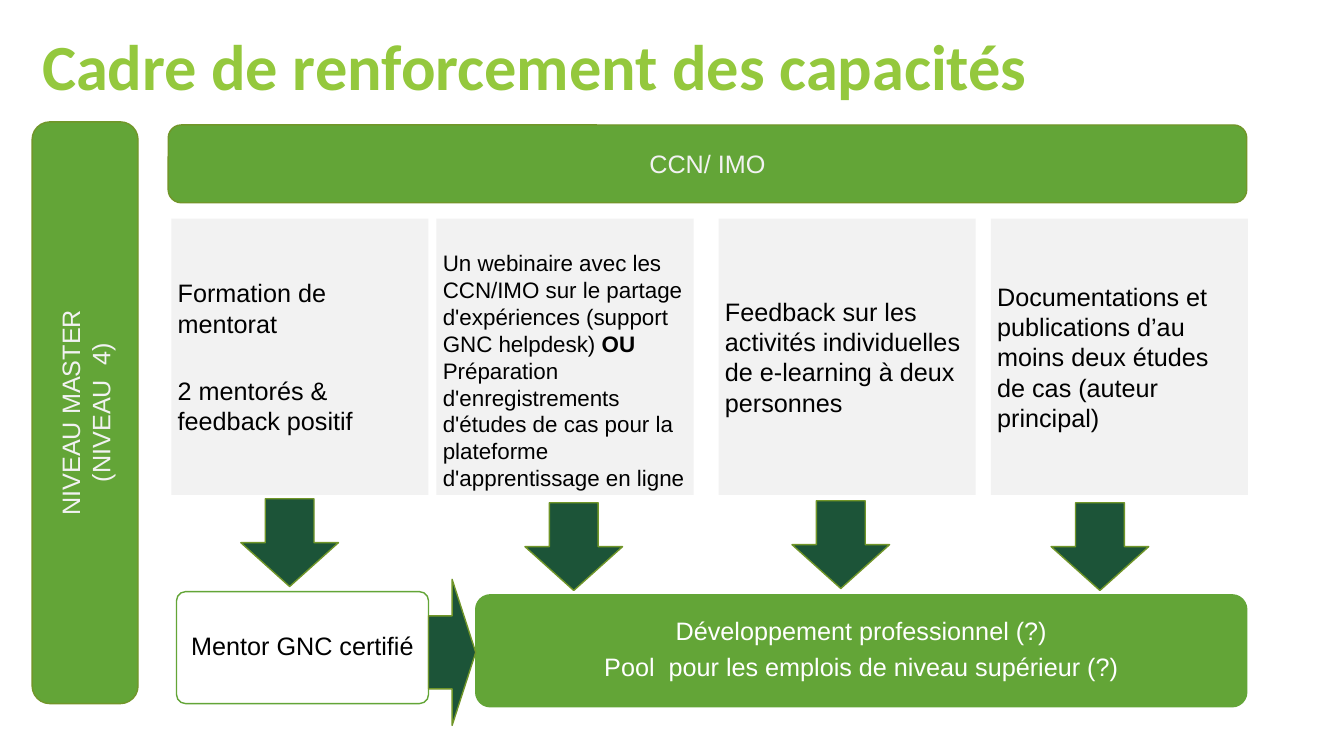
from pptx import Presentation
from pptx.dml.color import RGBColor
from pptx.enum.shapes import MSO_SHAPE
from pptx.enum.text import MSO_ANCHOR, PP_ALIGN
from pptx.util import Cm, Pt

GREEN, DARK, OLIVE, LIME = "63A537", "1C5438", "719629", "94C83D"
GREY, BLACK, WHITE = "F2F2F2", "000000", "FFFFFF"


def rgb(value):
    return RGBColor.from_string(value)


def add_text(sp, paragraphs, size=18, color=BLACK, font="Arial", bold=False,
             align=PP_ALIGN.LEFT, anchor=MSO_ANCHOR.MIDDLE, line=None,
             after=0, gap=0, insets=(0.25, 0.13, 0.25, 0.13)):
    tf = sp.text_frame
    tf.word_wrap = True
    tf.vertical_anchor = anchor
    tf.margin_left, tf.margin_top, tf.margin_right, tf.margin_bottom = map(Cm, insets)
    for i, runs in enumerate(paragraphs):
        p = tf.add_paragraph() if i else tf.paragraphs[0]
        p.alignment = align
        p.space_before = Pt(gap if i else 0)
        p.space_after = Pt(after)
        if line:
            p.line_spacing = line
        for text, strong in [(runs, bold)] if isinstance(runs, str) else runs:
            r = p.add_run()
            r.text = text
            r.font.name = font
            r.font.size = Pt(size)
            r.font.bold = strong
            r.font.color.rgb = rgb(color)


def add_block(slide, kind, box, fill=None, line=None, corner=None):
    sp = slide.shapes.add_shape(kind, *map(Cm, box))
    sp.shadow.inherit = False
    if fill:
        sp.fill.solid()
        sp.fill.fore_color.rgb = rgb(fill)
    else:
        sp.fill.background()
    if line:
        sp.line.color.rgb = rgb(line)
        sp.line.width = Pt(1)
    else:
        sp.line.fill.background()
    if corner is not None:
        sp.adjustments[0] = corner
    return sp


def add_title(slide, box):
    sp = slide.shapes.add_textbox(*map(Cm, box))
    add_text(sp, ["Cadre de renforcement des capacités"], size=46, color=LIME,
             font="Calibri", bold=True, anchor=MSO_ANCHOR.BOTTOM, line=0.8)


def add_level_bar(slide, box):
    x, y, w, h = box
    turned = (x + (w - h) / 2, y + (h - w) / 2, h, w)
    sp = add_block(slide, MSO_SHAPE.ROUNDED_RECTANGLE, turned, GREEN, OLIVE)
    sp.rotation = 270
    add_text(sp, ["NIVEAU MASTER", "(NIVEAU  4)"], color=GREY, align=PP_ALIGN.CENTER)


def add_header(slide, box):
    sp = add_block(slide, MSO_SHAPE.ROUNDED_RECTANGLE, box, GREEN, OLIVE)
    add_text(sp, ["CCN/ IMO"], color=GREY, align=PP_ALIGN.CENTER)


def add_activity(slide, box, paragraphs, arrow_dx, arrow_dy, size=18, top=0.08):
    x, y, w, h = box
    sp = add_block(slide, MSO_SHAPE.RECTANGLE, box, GREY)
    add_text(sp, paragraphs, size=size, after=2.6, gap=24,
             insets=(0.16, top, 0.16, 0.08))
    add_block(slide, MSO_SHAPE.DOWN_ARROW,
              (x + arrow_dx, y + h + arrow_dy, 2.46, 2.21), DARK, OLIVE)


def add_outcomes(slide, box):
    x, y, w, h = box
    mentor_w, pool_x = 6.35, 7.54
    parts = [
        ((x, y, mentor_w, h), None, 0.08, BLACK, ["Mentor GNC certifié"]),
        ((x + pool_x, y + 0.08, w - pool_x, h), GREEN, 0.13, WHITE,
         ["Développement professionnel (?)",
          "Pool  pour les emplois de niveau supérieur (?)"]),
    ]
    for place, fill, corner, color, paragraphs in parts:
        sp = add_block(slide, MSO_SHAPE.ROUNDED_RECTANGLE, place, fill, GREEN, corner)
        add_text(sp, paragraphs, color=color, align=PP_ALIGN.CENTER, line=0.9,
                 after=6.3, insets=(0.08,) * 4)
    add_block(slide, MSO_SHAPE.RIGHT_ARROW,
              (x + mentor_w, y - 0.31, pool_x - mentor_w, 3.68), DARK, OLIVE)


def main():
    prs = Presentation()
    prs.slide_width, prs.slide_height = Cm(33.87), Cm(19.05)
    slide = prs.slides.add_slide(prs.slide_layouts[6])
    webinar = [
        ("Un webinaire avec les CCN/IMO sur le partage d'expériences "
         "(support GNC helpdesk) ", False),
        ("OU", True),
        (" Préparation d'enregistrements d'études de cas pour la plateforme "
         "d'apprentissage en ligne", False),
    ]
    activities = [
        (4.32, ["Formation de mentorat", "2 mentorés & feedback positif"],
         1.75, 0.1, {}),
        (11, [webinar], 2.23, 0.2, {"size": 16, "top": 0.76}),
        (18.11, ["Feedback sur les activités individuelles de e-learning "
                 "à deux personnes"], 1.85, 0.15, {}),
        (24.97, ["Documentations et publications d’au moins deux études de cas "
                 "(auteur principal)"], 1.52, 0.2, {}),
    ]
    for x, paragraphs, arrow_dx, arrow_dy, style in activities:
        add_activity(slide, (x, 5.51, 6.48, 6.96), paragraphs, arrow_dx, arrow_dy, **style)
    add_outcomes(slide, (4.45, 14.91, 26.97, 2.82))
    add_level_bar(slide, (0.81, 3.07, 2.67, 14.66))
    add_header(slide, (4.24, 3.15, 27.18, 1.96))
    add_title(slide, (0.81, 0.76, 29.21, 1.96))
    prs.save("out.pptx")


if __name__ == "__main__":
    main()
